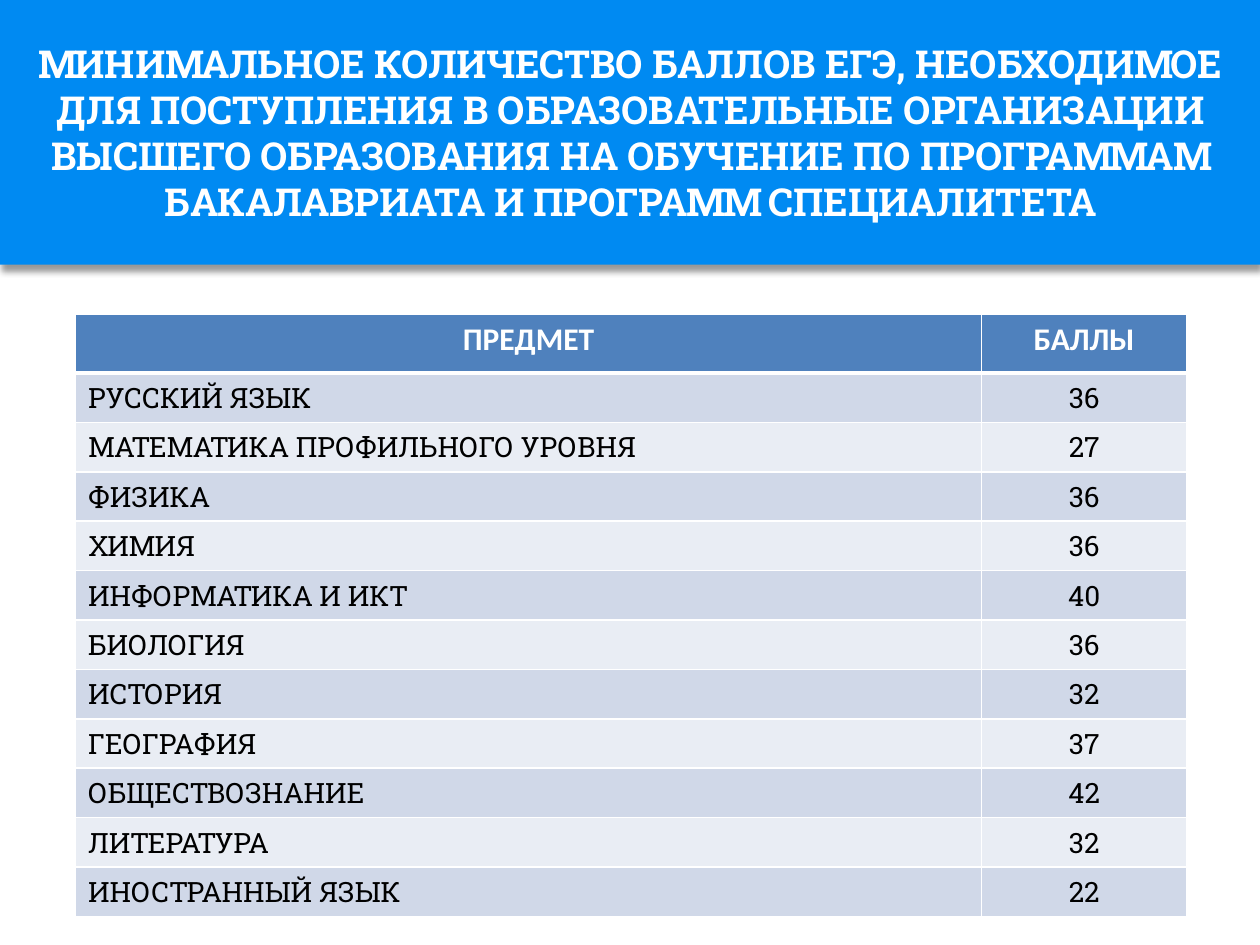
from pptx import Presentation
from pptx import util as u
from pptx.dml.color import RGBColor
from pptx.enum import shapes, text
from pptx.oxml import parse_xml
from pptx.oxml.ns import nsdecls

WHITE = RGBColor(0xFF, 0xFF, 0xFF)
BLACK = RGBColor(0, 0, 0)
BANNER_BLUE = RGBColor(0x00, 0x8A, 0xF2)
HEADER_BLUE = RGBColor(0x4F, 0x81, 0xBD)
BANDS = (RGBColor(0xD0, 0xD8, 0xE8), RGBColor(0xE9, 0xED, 0xF4))

TITLE = (
    "МИНИМАЛЬНОЕ КОЛИЧЕСТВО БАЛЛОВ ЕГЭ, НЕОБХОДИМОЕ "
    "ДЛЯ ПОСТУПЛЕНИЯ В ОБРАЗОВАТЕЛЬНЫЕ ОРГАНИЗАЦИИ "
    "ВЫСШЕГО ОБРАЗОВАНИЯ НА ОБУЧЕНИЕ ПО ПРОГРАММАМ "
    "БАКАЛАВРИАТА И ПРОГРАММ СПЕЦИАЛИТЕТА"
)
HEADINGS = ("ПРЕДМЕТ", "БАЛЛЫ")
SCORES = (
    ("РУССКИЙ ЯЗЫК", 36),
    ("МАТЕМАТИКА ПРОФИЛЬНОГО УРОВНЯ", 27),
    ("ФИЗИКА", 36),
    ("ХИМИЯ", 36),
    ("ИНФОРМАТИКА И ИКТ", 40),
    ("БИОЛОГИЯ", 36),
    ("ИСТОРИЯ", 32),
    ("ГЕОГРАФИЯ", 37),
    ("ОБЩЕСТВОЗНАНИЕ", 42),
    ("ЛИТЕРАТУРА", 32),
    ("ИНОСТРАННЫЙ ЯЗЫК", 22),
)


class ScoreSlide:
    body_font = "Roboto Slab"
    heading_font = "Calibri"

    def __init__(self, deck):
        self.slide = deck.slides.add_slide(deck.slide_layouts[6])

    def add_text(self, frame, wording, size, color, font, bold=False, centred=True):
        paragraph = frame.paragraphs[0]
        paragraph.alignment = text.PP_ALIGN.CENTER if centred else text.PP_ALIGN.LEFT
        run = paragraph.add_run()
        run.text = wording
        run.font.size = u.Pt(size)
        run.font.name = font
        run.font.bold = bold
        run.font.color.rgb = color

    def shadow(self, shape):
        shape.shadow.inherit = False
        effects = shape._element.spPr.find("{*}effectLst")
        effects.append(parse_xml(
            f'<a:outerShdw {nsdecls("a")} blurRad="{u.Pt(4)}" dist="{u.Pt(4)}" '
            'dir="5400000" algn="t" rotWithShape="0"><a:srgbClr val="000000">'
            '<a:alpha val="40000"/></a:srgbClr></a:outerShdw>'
        ))

    def banner(self, wording, width, height):
        banner = self.slide.shapes.add_shape(
            shapes.MSO_SHAPE.RECTANGLE, 0, 0, u.Inches(width), u.Inches(height))
        banner.fill.solid()
        banner.fill.fore_color.rgb = BANNER_BLUE
        banner.line.fill.background()
        self.shadow(banner)
        frame = banner.text_frame
        frame.word_wrap = True
        frame.vertical_anchor = text.MSO_ANCHOR.MIDDLE
        self.add_text(frame, wording, 22, WHITE, self.body_font, bold=True)

    def borders(self, cell, top, bottom):
        properties = cell._tc.get_or_add_tcPr()
        widths = {"L": 1, "R": 1, "T": top, "B": bottom}
        for position, (side, width) in enumerate(widths.items()):
            properties.insert(position, parse_xml(
                f'<a:ln{side} {nsdecls("a")} w="{u.Pt(width)}"><a:solidFill>'
                f'<a:srgbClr val="{WHITE}"/></a:solidFill></a:ln{side}>'
            ))

    def cell(self, cell, wording, fill, top=1, bottom=1, **style):
        cell.fill.solid()
        cell.fill.fore_color.rgb = fill
        self.borders(cell, top, bottom)
        self.add_text(cell.text_frame, wording, **style)

    def table(self, left, top, widths, header_height, row_height):
        heights = [header_height] + [row_height] * len(SCORES)
        table = self.slide.shapes.add_table(
            len(heights), len(widths), u.Inches(left), u.Inches(top),
            u.Inches(sum(widths)), u.Inches(sum(heights))).table
        for column, width in zip(table.columns, widths):
            column.width = u.Inches(width)
        for row, height in zip(table.rows, heights):
            row.height = u.Inches(height)
        for column, heading in enumerate(HEADINGS):
            self.cell(table.cell(0, column), heading, HEADER_BLUE, bottom=3,
                      size=18, color=WHITE, font=self.heading_font, bold=True)
        for row, entry in enumerate(SCORES, 1):
            for column, value in enumerate(entry):
                self.cell(table.cell(row, column), str(value), BANDS[(row - 1) % 2],
                          top=3 if row == 1 else 1, size=16, color=BLACK,
                          font=self.body_font, centred=column == 1)


def main():
    deck = Presentation()
    deck.slide_width = u.Inches(10)
    deck.slide_height = u.Inches(7.5)
    scores = ScoreSlide(deck)
    scores.banner(TITLE, 10.01, 2.1)
    scores.table(0.6, 2.49, (7.19, 1.63), 0.47, 0.34)
    deck.save("out.pptx")


if __name__ == "__main__":
    main()
